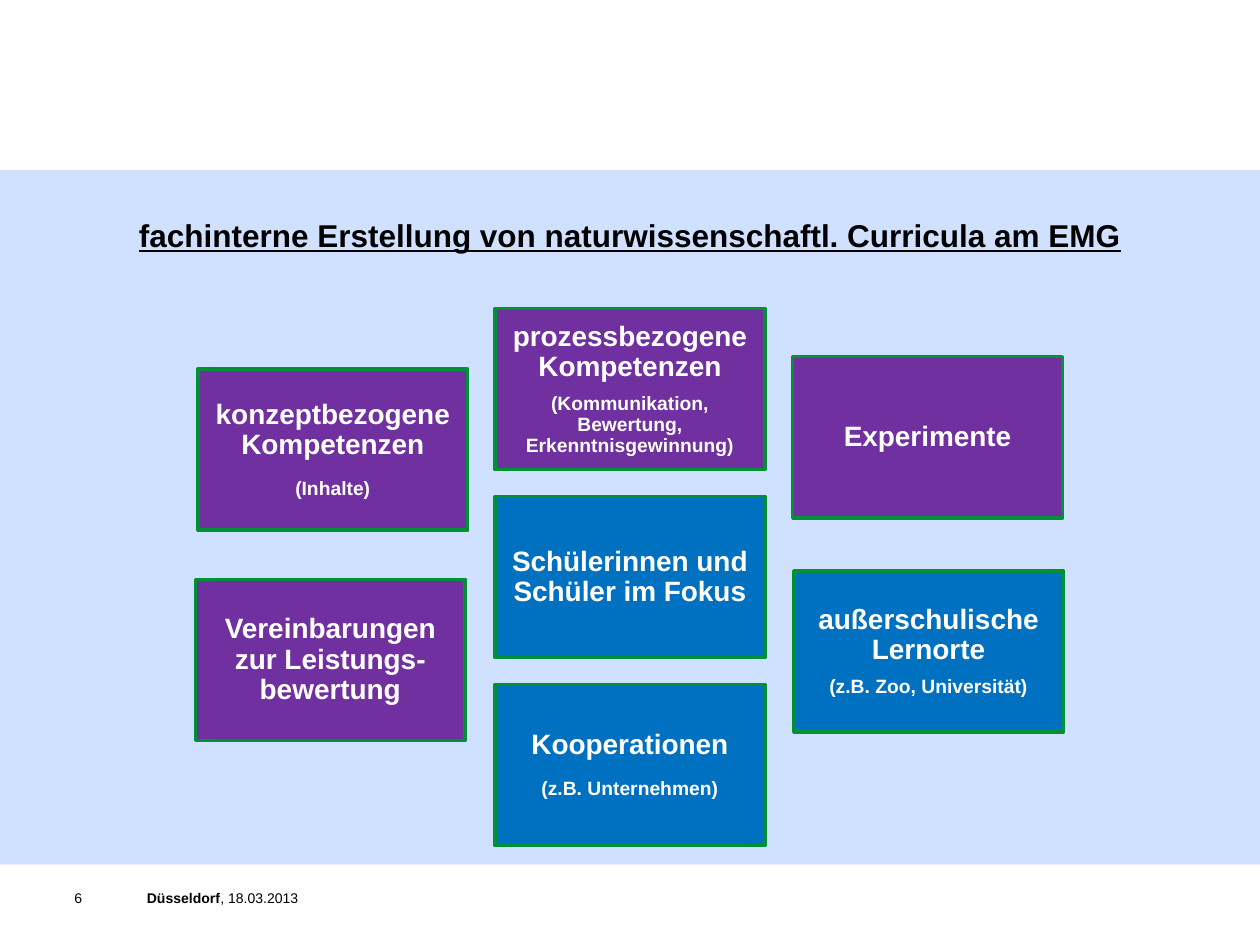
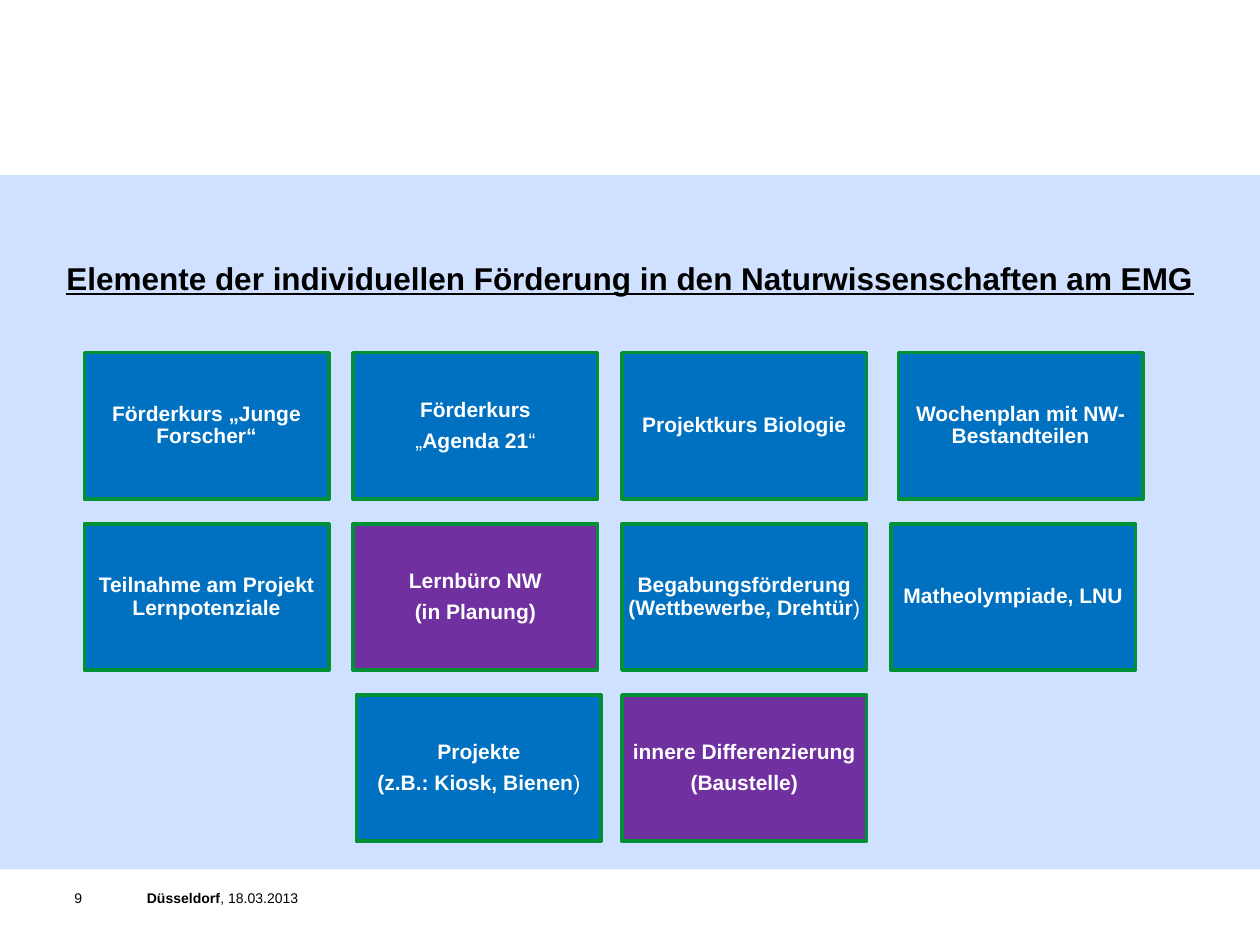
from lxml import etree
from pptx import Presentation
from pptx.dml.color import RGBColor
from pptx.enum.shapes import MSO_SHAPE
from pptx.enum.text import MSO_ANCHOR, PP_ALIGN
from pptx.oxml.ns import qn
from pptx.util import Cm, Pt

RECT = MSO_SHAPE.RECTANGLE
CENTER = PP_ALIGN.CENTER
TOP, MIDDLE = MSO_ANCHOR.TOP, MSO_ANCHOR.MIDDLE

FONT = "Arial"
COLORS = {
    "band": "6699FF",
    "purple": "7030A0",
    "blue": "0070C0",
    "border": "009036",
    "text": "000000",
    "card_text": "FFFFFF",
}
BAND_ALPHA = 30
BAND_H = 14.0
FOOTER_Y = 17.93

# Curriculum cards stand in three columns, the middle one evenly stacked
MID_X = 9.98
MID_Y = [6.22 + 3.79 * i for i in range(3)]
# Support cards stand on a grid of four columns and three rows
COL = [1.7 + 5.42 * i for i in range(4)]
ROW = [7.11 + 3.45 * i for i in range(3)]

# Each card: x, y, fill, gap after the first paragraph, paragraphs of (text, bold) runs
SLIDES = [
    {
        "number": "6",
        "title": "fachinterne Erstellung von naturwissenschaftl. Curricula am EMG",
        "band_y": 3.43, "title_drop": 0.92,
        "card": (5.44, 3.25), "inset": 0.18, "sizes": (16, 11),
        "cards": [
            (3.99, 7.44, "purple", 10.5,
             [[("konzeptbezogene Kompetenzen", True)], [("(Inhalte)", True)]]),
            (MID_X, MID_Y[0], "purple", 6.4,
             [[("prozessbezogene Kompetenzen", True)],
              [("(Kommunikation, Bewertung, Erkenntnisgewinnung)", True)]]),
            (15.98, 7.19, "purple", 0, [[("Experimente", True)]]),
            (3.94, 11.68, "purple", 0,
             [[("Vereinbarungen zur Leistungs-bewertung", True)]]),
            (MID_X, MID_Y[1], "blue", 0,
             [[("Schülerinnen und Schüler im Fokus", True)]]),
            (16.0, 11.51, "blue", 6.4,
             [[("außerschulische Lernorte", True)], [("(z.B. Zoo, Universität)", True)]]),
            (MID_X, MID_Y[2], "blue", 10.5,
             [[("Kooperationen", True)], [("(z.B. Unternehmen)", True)]]),
        ],
    },
    {
        "number": "9",
        "title": "Elemente der individuellen Förderung in den Naturwissenschaften am EMG",
        "band_y": 3.53, "title_drop": 1.69,
        "card": (4.93, 2.95), "inset": 0.12, "sizes": (12, 12),
        "cards": [
            (COL[0], ROW[0], "blue", 0, [[("Förderkurs „Junge Forscher“", True)]]),
            (COL[1], ROW[0], "blue", 4.8,
             [[("Förderkurs", True)],
              [("„", False), ("Agenda 21", True), ("“", False)]]),
            (COL[2], ROW[0], "blue", 0, [[("Projektkurs Biologie", True)]]),
            (18.11, ROW[0], "blue", 0, [[("Wochenplan mit NW-Bestandteilen", True)]]),
            (COL[0], ROW[1], "blue", 0, [[("Teilnahme am Projekt Lernpotenziale", True)]]),
            (COL[1], ROW[1], "purple", 4.8,
             [[("Lernbüro NW", True)], [("(in Planung)", True)]]),
            (COL[2], ROW[1], "blue", 0,
             [[("Begabungsförderung (Wettbewerbe, Drehtür", True), (")", False)]]),
            (COL[3], ROW[1], "blue", 0, [[("Matheolympiade, LNU", True)]]),
            (7.19, ROW[2], "blue", 4.8,
             [[("Projekte", True)], [("(z.B.: Kiosk, Bienen", True), (")", False)]]),
            (COL[2], ROW[2], "purple", 4.8,
             [[("innere Differenzierung", True)], [("(Baustelle)", True)]]),
        ],
    },
]


def add_runs(p, runs, size, color):
    for text, bold in runs:
        r = p.add_run()
        r.text = text
        r.font.name = FONT
        r.font.size = Pt(size)
        r.font.bold = bold
        r.font.color.rgb = RGBColor.from_string(COLORS[color])


def add_rect(s, x, y, w, h, fill, anchor, inset):
    """Add a filled rectangle without shadow and with equal text insets."""
    sp = s.shapes.add_shape(RECT, Cm(x), Cm(y), Cm(w), Cm(h))
    sp.shadow.inherit = False
    sp.fill.solid()
    sp.fill.fore_color.rgb = RGBColor.from_string(COLORS[fill])
    tf = sp.text_frame
    tf.vertical_anchor = anchor
    tf.margin_left = tf.margin_right = tf.margin_top = tf.margin_bottom = Cm(inset)
    return sp


prs = Presentation()
prs.slide_width, prs.slide_height = Cm(25.4), Cm(19.05)

for page in SLIDES:
    s = prs.slides.add_slide(prs.slide_layouts[6])

    # Footer: page number, then place and date
    for x, w, runs in [
        (1.5, 0.81, [(page["number"], False)]),
        (2.96, 5.3, [("Düsseldorf", True), (", 18.03.2013", False)]),
    ]:
        tf = s.shapes.add_textbox(Cm(x), Cm(FOOTER_Y), Cm(w), Cm(0.94)).text_frame
        tf.word_wrap = True
        tf.margin_left = tf.margin_right = tf.margin_top = tf.margin_bottom = 0
        add_runs(tf.paragraphs[0], runs, 8, "text")

    # Translucent band that carries the underlined title
    sp = add_rect(s, 0, page["band_y"], 25.4, BAND_H, "band", TOP, 0.25)
    sp.line.fill.background()
    rgb = sp.fill._xPr.find(qn("a:solidFill")).find(qn("a:srgbClr"))
    etree.SubElement(rgb, qn("a:alpha")).set("val", str(BAND_ALPHA * 1000))
    tf = sp.text_frame
    tf.word_wrap = False
    tf.margin_top = Cm(page["title_drop"])
    p = tf.paragraphs[0]
    p.alignment = CENTER
    add_runs(p, [(page["title"], True)], 18, "text")
    p.runs[0].font.underline = True

    for x, y, fill, gap, paragraphs in page["cards"]:
        sp = add_rect(s, x, y, *page["card"], fill, MIDDLE, page["inset"])
        sp.line.color.rgb = RGBColor.from_string(COLORS["border"])
        sp.line.width = Pt(2)
        tf = sp.text_frame
        tf.word_wrap = True
        for i, (runs, size) in enumerate(zip(paragraphs, page["sizes"])):
            p = tf.add_paragraph() if i else tf.paragraphs[0]
            p.alignment = CENTER
            p.line_spacing = 0.9
            p.space_after = Pt(0 if i else gap)
            add_runs(p, runs, size, "card_text")

prs.save("out.pptx")
